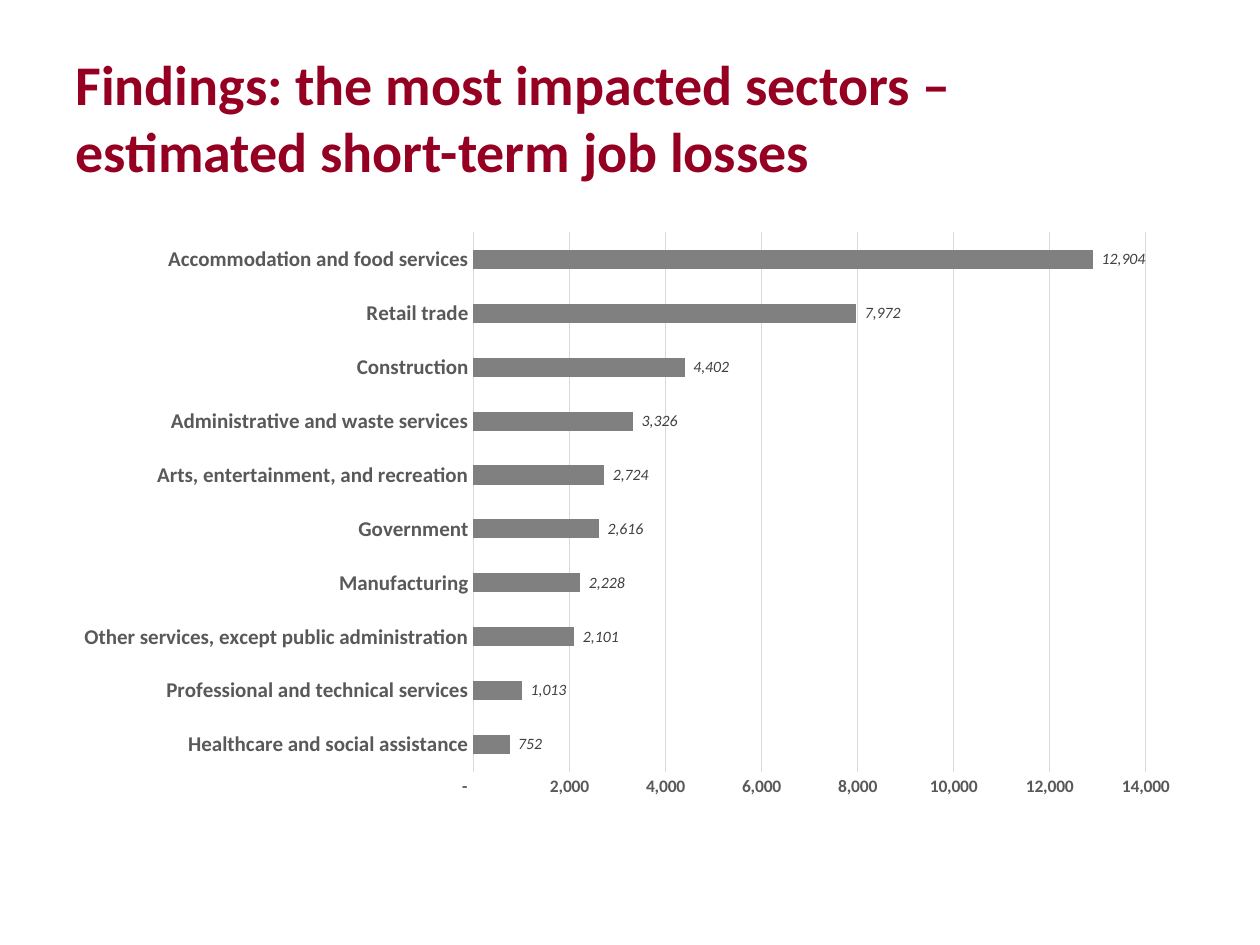
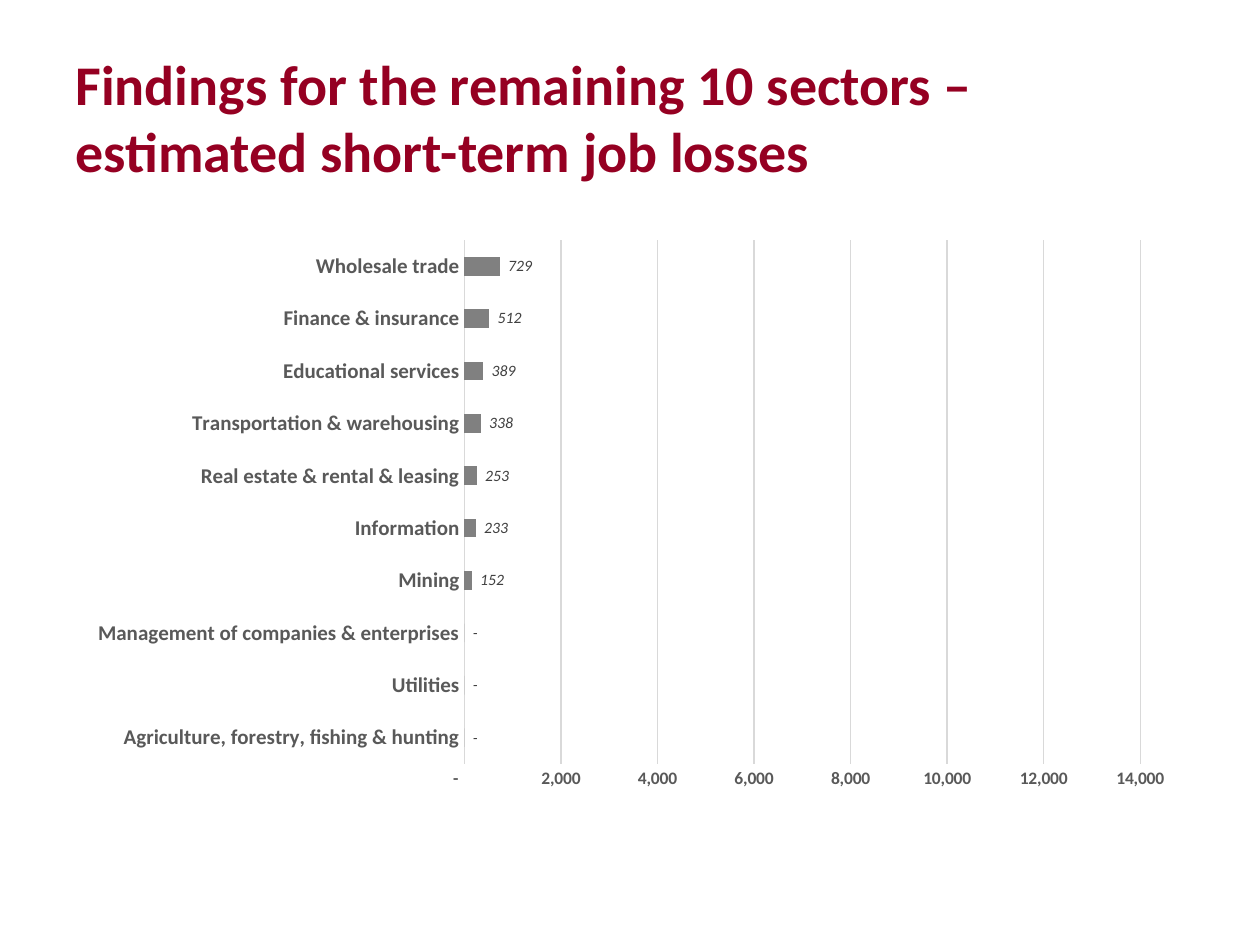
"""Build two slides with bar charts of estimated short-term job losses by sector."""
from lxml.etree import SubElement
from pptx import Presentation
from pptx.chart.data import CategoryChartData
from pptx.dml.color import RGBColor
from pptx.enum.chart import XL_CHART_TYPE as ChartType, XL_LABEL_POSITION as LabelPosition
from pptx.enum.chart import XL_TICK_MARK as TickMark
from pptx.enum.text import MSO_ANCHOR as Anchor
from pptx.oxml.ns import qn
from pptx.util import Cm, Pt

SLIDES = [
    {
        "title": "Findings: the most impacted sectors – estimated short-term job losses",
        "plot": {"x": 0.362, "y": 0.02, "w": 0.593, "h": 0.918},
        "losses": [
            ("Accommodation and food services", 12904),
            ("Retail trade", 7972),
            ("Construction", 4402),
            ("Administrative and waste services", 3326),
            ("Arts, entertainment, and recreation", 2724),
            ("Government", 2616),
            ("Manufacturing", 2228),
            ("Other services, except public administration", 2101),
            ("Professional and technical services", 1013),
            ("Healthcare and social assistance", 752),
        ],
    },
    {
        "title": "Findings for the remaining 10 sectors – estimated short-term job losses",
        "plot": {"x": 0.354, "y": 0.033, "w": 0.596, "h": 0.892},
        "losses": [
            ("Wholesale trade", 729),
            ("Finance & insurance", 512),
            ("Educational services", 389),
            ("Transportation & warehousing", 338),
            ("Real estate & rental & leasing", 253),
            ("Information", 233),
            ("Mining", 152),
            ("Management of companies & enterprises", 0),
            ("Utilities", 0),
            ("Agriculture, forestry, fishing & hunting", 0),
        ],
    },
]
COLORS = {
    "title": "950022",
    "bar": "808080",
    "axis": "595959",
    "label": "404040",
    "grid": "D9D9D9",
    "text": "000000",
}
FONT = "Calibri"
NUMBER_FORMAT = r'_(* #,##0_);_(* \(#,##0\);_(* "-"??_);_('
LEFT, WIDTH = Cm(1.27), Cm(22.86)


def color(name):
    return RGBColor.from_string(COLORS[name])


def style_font(font, size, color_name, bold=False, italic=False):
    font.name, font.size = FONT, Pt(size)
    font.bold, font.italic = bold, italic
    font.color.rgb = color(color_name)


def style_line(line):
    line.color.rgb = color("grid")
    line.width = Pt(0.75)


def add_title(slide, text):
    frame = slide.shapes.add_textbox(LEFT, Cm(0.76), WIDTH, Cm(3.18)).text_frame
    frame.word_wrap = True
    frame.vertical_anchor = Anchor.MIDDLE
    frame.text = text
    style_font(frame.paragraphs[0].font, 32, "title", bold=True)


def place_plot(chart, box):
    plot_area = chart.element.find(".//" + qn("c:plotArea"))
    for layout in plot_area.findall(qn("c:layout")):
        plot_area.remove(layout)
    layout = SubElement(plot_area, qn("c:layout"))
    plot_area.insert(0, layout)
    manual = SubElement(layout, qn("c:manualLayout"))
    settings = {"layoutTarget": "inner", "xMode": "edge", "yMode": "edge", **box}
    for tag, value in settings.items():
        SubElement(manual, qn("c:" + tag)).set("val", str(value))


def style_axis(axis, size):
    axis.major_tick_mark = axis.minor_tick_mark = TickMark.NONE
    style_font(axis.tick_labels.font, size, "axis", bold=True)


def add_loss_chart(slide, losses, plot_box):
    data = CategoryChartData(number_format=NUMBER_FORMAT)
    sectors, values = zip(*reversed(losses))
    data.categories = sectors
    data.add_series("Series 1", values)
    chart = slide.shapes.add_chart(
        ChartType.BAR_CLUSTERED, LEFT, Cm(4.45), WIDTH, Cm(11.84), data
    ).chart
    chart.has_legend = chart.has_title = False
    style_font(chart.font, 10, "text")
    place_plot(chart, plot_box)

    style_axis(chart.category_axis, 12)
    style_line(chart.category_axis.format.line)
    value_axis = chart.value_axis
    style_axis(value_axis, 10)
    value_axis.minimum_scale, value_axis.maximum_scale = 0, 14000
    value_axis.major_unit = 2000
    value_axis.format.line.fill.background()
    style_line(value_axis.major_gridlines.format.line)
    value_axis.tick_labels.number_format = NUMBER_FORMAT
    value_axis.tick_labels.number_format_is_linked = False

    plot = chart.plots[0]
    plot.gap_width = 182
    plot.vary_by_categories = False
    series = plot.series[0]
    series.format.fill.solid()
    series.format.fill.fore_color.rgb = color("bar")
    labels = series.data_labels
    labels.show_value = True
    labels.position = LabelPosition.OUTSIDE_END
    labels.number_format = NUMBER_FORMAT
    labels.number_format_is_linked = False
    style_font(labels.font, 9, "label", italic=True)


def main():
    presentation = Presentation()
    presentation.slide_width, presentation.slide_height = Cm(25.4), Cm(19.05)
    for content in SLIDES:
        slide = presentation.slides.add_slide(presentation.slide_layouts[6])
        add_title(slide, content["title"])
        add_loss_chart(slide, content["losses"], content["plot"])
    presentation.save("out.pptx")


if __name__ == "__main__":
    main()
